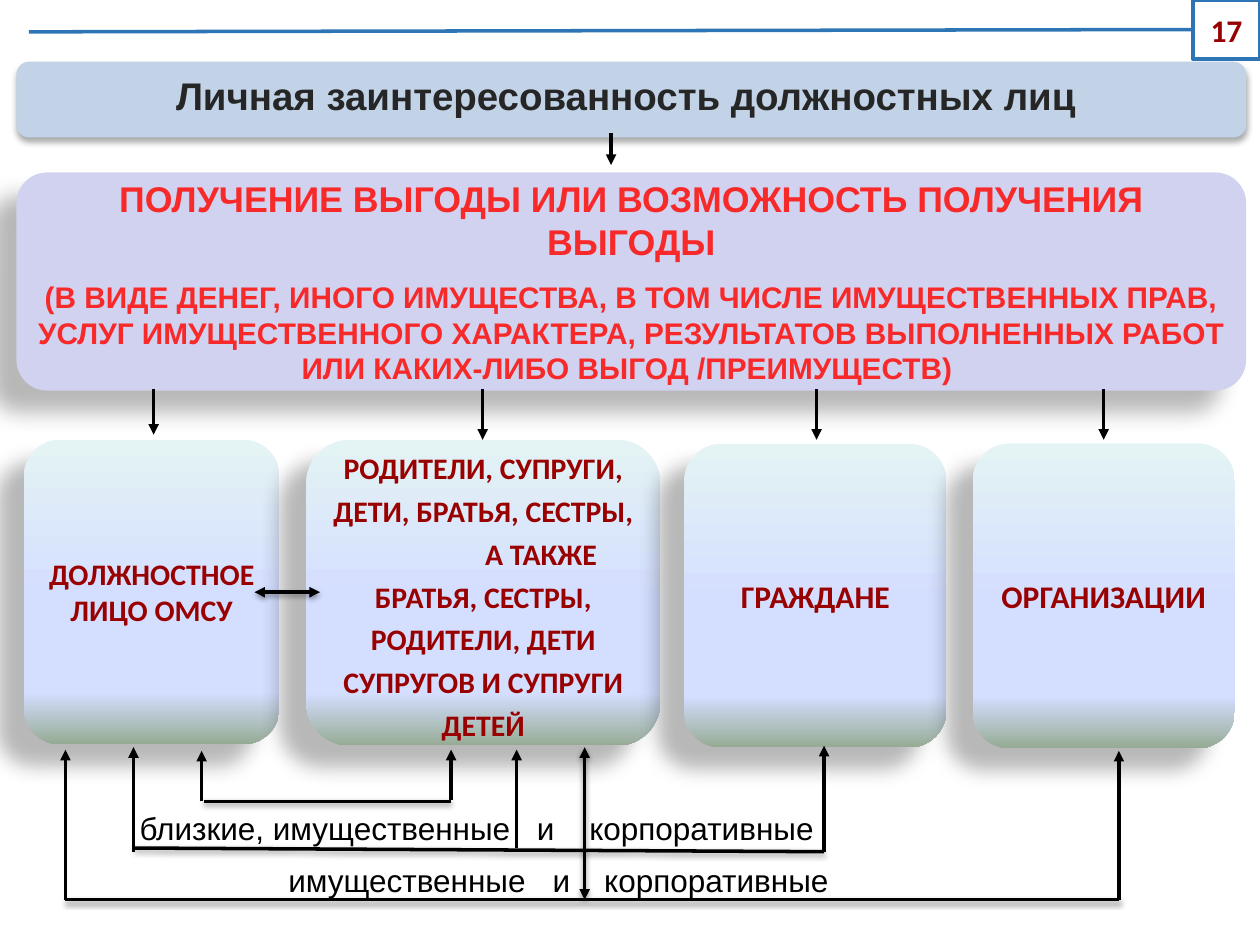
from lxml import etree
from pptx import Presentation
from pptx.dml.color import RGBColor
from pptx.enum.shapes import MSO_CONNECTOR, MSO_SHAPE
from pptx.enum.text import MSO_ANCHOR, PP_ALIGN
from pptx.oxml.ns import qn
from pptx.util import Pt

ROUNDED, CALLOUT = MSO_SHAPE.ROUNDED_RECTANGLE, MSO_SHAPE.LINE_CALLOUT_1
STRAIGHT = MSO_CONNECTOR.STRAIGHT
CENTER, LEFT = PP_ALIGN.CENTER, PP_ALIGN.LEFT
MIDDLE = MSO_ANCHOR.MIDDLE
COLORS = {
    "title fill": "C2D3E8", "title text": "262626",
    "benefit fill": "D1D1F0", "benefit text": "F72929",
    "card text": "990000", "number text": "960000",
    "rule": "2E75B6", "black": "000000",
}
CARD_STOPS = [(0, "E4F3F4"), (53, "D4DEFF"), (83, "D4DEFF"), (100, "96AB94")]
# Opacity in percent, blur and distance in points, direction in degrees
TITLE_SHADOW = (32, 3.5, 2.2, 90)
PANEL_SHADOW = (28, 11.8, 19.7, 141)
LINE_SHADOW = (38, 3.1, 1.6, 90)


def add_shadow(effects, shadow):
    opacity, blur, distance, direction = shadow
    outer = etree.SubElement(
        effects, qn("a:outerShdw"), blurRad=str(Pt(blur)), dist=str(Pt(distance)),
        dir=str(direction * 60000), algn="ctr", rotWithShape="0")
    color = etree.SubElement(outer, qn("a:srgbClr"), val=COLORS["black"])
    etree.SubElement(color, qn("a:alpha"), val=str(opacity * 1000))


def add_text(para, text, font, size, color, bold=True, align=CENTER):
    para.alignment = align
    span = para.add_run()
    span.text = text
    span.font.name = font
    span.font.size = Pt(size)
    span.font.bold = bold
    span.font.color.rgb = RGBColor.from_string(COLORS[color])


deck = Presentation()
deck.slide_width, deck.slide_height = Pt(720), Pt(540)
page = deck.slides.add_slide(deck.slide_layouts[6])

# Panels: left, top, width, height, corner, fill, shadow, line spacing, paragraphs.
# Each paragraph: text, font, size, colour, space after, left indent.
panels = [
    (9.4, 35.3, 702.7, 43.2, 0.167, "title fill", TITLE_SHADOW, 0.8,
     [("Личная заинтересованность должностных лиц ", "Arial", 22, "title text", 0, 0)]),
    (9.4, 98.6, 702.7, 124.6, 0.141, "benefit fill", PANEL_SHADOW, 1,
     [("ПОЛУЧЕНИЕ ВЫГОДЫ ИЛИ ВОЗМОЖНОСТЬ ПОЛУЧЕНИЯ ВЫГОДЫ",
       "Arial", 20.4, "benefit text", 9, 0),
      ("(В ВИДЕ ДЕНЕГ, ИНОГО ИМУЩЕСТВА, В ТОМ ЧИСЛЕ ИМУЩЕСТВЕННЫХ ПРАВ, "
       "УСЛУГ ИМУЩЕСТВЕННОГО ХАРАКТЕРА, РЕЗУЛЬТАТОВ ВЫПОЛНЕННЫХ РАБОТ "
       "ИЛИ КАКИХ-ЛИБО ВЫГОД /ПРЕИМУЩЕСТВ) ", "Arial", 17, "benefit text", 12, 0)]),
    (13.7, 251.3, 146, 174, 0.141, None, PANEL_SHADOW, 1,
     [("ДОЛЖНОСТНОЕ ЛИЦО ОМСУ", "Calibri", 17, "card text", 0, 0)]),
    (175, 251.3, 202.3, 174.7, 0.141, None, PANEL_SHADOW, 1.2,
     [("РОДИТЕЛИ, СУПРУГИ, ДЕТИ, БРАТЬЯ, СЕСТРЫ,", "Calibri", 17, "card text", 0, 0),
      ("А ТАКЖЕ", "Calibri", 17, "card text", 0, 66),
      ("БРАТЬЯ, СЕСТРЫ, РОДИТЕЛИ, ДЕТИ СУПРУГОВ И СУПРУГИ ДЕТЕЙ",
       "Calibri", 17, "card text", 0, 0)]),
    (391, 253.6, 149.8, 173.5, 0.141, None, PANEL_SHADOW, 1,
     [("ГРАЖДАНЕ", "Calibri", 18, "card text", 0, 0)]),
    (555.8, 253.4, 149.8, 174.2, 0.141, None, PANEL_SHADOW, 1,
     [("ОРГАНИЗАЦИИ", "Calibri", 18, "card text", 0, 0)]),
]
for left, top, width, height, corner, fill, shadow, spacing, paragraphs in panels:
    panel = page.shapes.add_shape(ROUNDED, Pt(left), Pt(top), Pt(width), Pt(height))
    panel.adjustments[0] = corner
    panel.line.fill.background()
    if fill:
        panel.fill.solid()
        panel.fill.fore_color.rgb = RGBColor.from_string(COLORS[fill])
    else:
        panel.fill.gradient()
        panel.fill.gradient_angle = 270
        stops = panel._element.spPr.find(".//" + qn("a:gsLst"))
        for stop in list(stops):
            stops.remove(stop)
        for position, color in CARD_STOPS:
            stop = etree.SubElement(stops, qn("a:gs"), pos=str(position * 1000))
            etree.SubElement(stop, qn("a:srgbClr"), val=color)
    panel.shadow.inherit = False
    add_shadow(panel._element.spPr.find(qn("a:effectLst")), shadow)
    frame = panel.text_frame
    frame.word_wrap = True
    frame.vertical_anchor = MIDDLE
    frame.margin_left = frame.margin_right = Pt(6)
    for index, (text, font, size, color, after, indent) in enumerate(paragraphs):
        para = frame.add_paragraph() if index else frame.paragraphs[0]
        para.line_spacing = spacing
        para.space_after = Pt(after)
        if indent:
            para._p.get_or_add_pPr().set("marL", str(Pt(indent)))
        add_text(para, text, font, size, color)

# Lines: start x, start y, end x, end y, arrowheads, shadow
lines = [
    (349.2, 76.3, 349.2, 94.3, "tail", False),
    (87.8, 222.5, 87.8, 248.4, "tail", False),
    *[(x, 222.5, x, 251.3, "tail", False) for x in (275.8, 466.6, 630.7)],
    (145.4, 338.4, 182.9, 338.4, "both", True),
    (115.2, 457.9, 115.2, 429.1, "tail", False),
    (257.8, 457.2, 257.8, 428.4, "tail", False),
    (76.3, 486.7, 76.3, 427, "tail", False),
    (295.2, 484.6, 295.2, 428.4, "tail", False),
    (470.9, 486.7, 470.9, 426.2, "tail", False),
    (37.4, 514.1, 37.4, 428.4, "tail", False),
    (334.1, 514.1, 334.1, 427, "both", True),
    (639.4, 514.1, 639.4, 429.1, "tail", False),
    (116.6, 457.9, 257.8, 457.9, "none", True),
    (76.3, 484.6, 470.9, 486.7, "none", True),
    (37.4, 514.1, 639.4, 514.1, "none", True),
]
for start_x, start_y, end_x, end_y, heads, shaded in lines:
    link = page.shapes.add_connector(
        STRAIGHT, Pt(start_x), Pt(start_y), Pt(end_x), Pt(end_y))
    link.line.width = Pt(2)
    link.line.color.rgb = RGBColor.from_string(COLORS["black"])
    stroke = link._element.spPr.find(qn("a:ln"))
    if heads == "both":
        etree.SubElement(stroke, qn("a:headEnd"), type="triangle")
    if heads != "none":
        etree.SubElement(stroke, qn("a:tailEnd"), type="triangle")
    effects = etree.SubElement(link._element.spPr, qn("a:effectLst"))
    if shaded:
        add_shadow(effects, LINE_SHADOW)

# Kinds of ties between the cards, with tab stops for the spaced words
ties = [
    (72.7, 458.6, 440, "близкие, имущественные\tи\tкорпоративные", (227, 257)),
    (157.7, 488.2, 352.8, "имущественные\tи\tкорпоративные", (151, 180.5)),
]
for left, top, width, text, tabs in ties:
    box = page.shapes.add_textbox(Pt(left), Pt(top), Pt(width), Pt(28.8))
    box.text_frame.word_wrap = True
    para = box.text_frame.paragraphs[0]
    tab_list = etree.SubElement(para._p.get_or_add_pPr(), qn("a:tabLst"))
    for tab in tabs:
        etree.SubElement(tab_list, qn("a:tab"), pos=str(Pt(tab)), algn="l")
    add_text(para, text, "Arial", 18, "black", bold=False, align=LEFT)

# Page number, whose callout line rules off the top
number = page.shapes.add_shape(CALLOUT, Pt(681.8), Pt(0), Pt(38.2), Pt(33.8))
for index, value in enumerate((0.5, -0.01, 0.54, -17.41)):
    number.adjustments[index] = value
number.fill.background()
number.line.color.rgb = RGBColor.from_string(COLORS["rule"])
number.line.width = Pt(2)
number.shadow.inherit = False
number.text_frame.word_wrap = True
number.text_frame.vertical_anchor = MIDDLE
add_text(number.text_frame.paragraphs[0], "17", "Calibri", 18, "number text")

deck.save("out.pptx")
